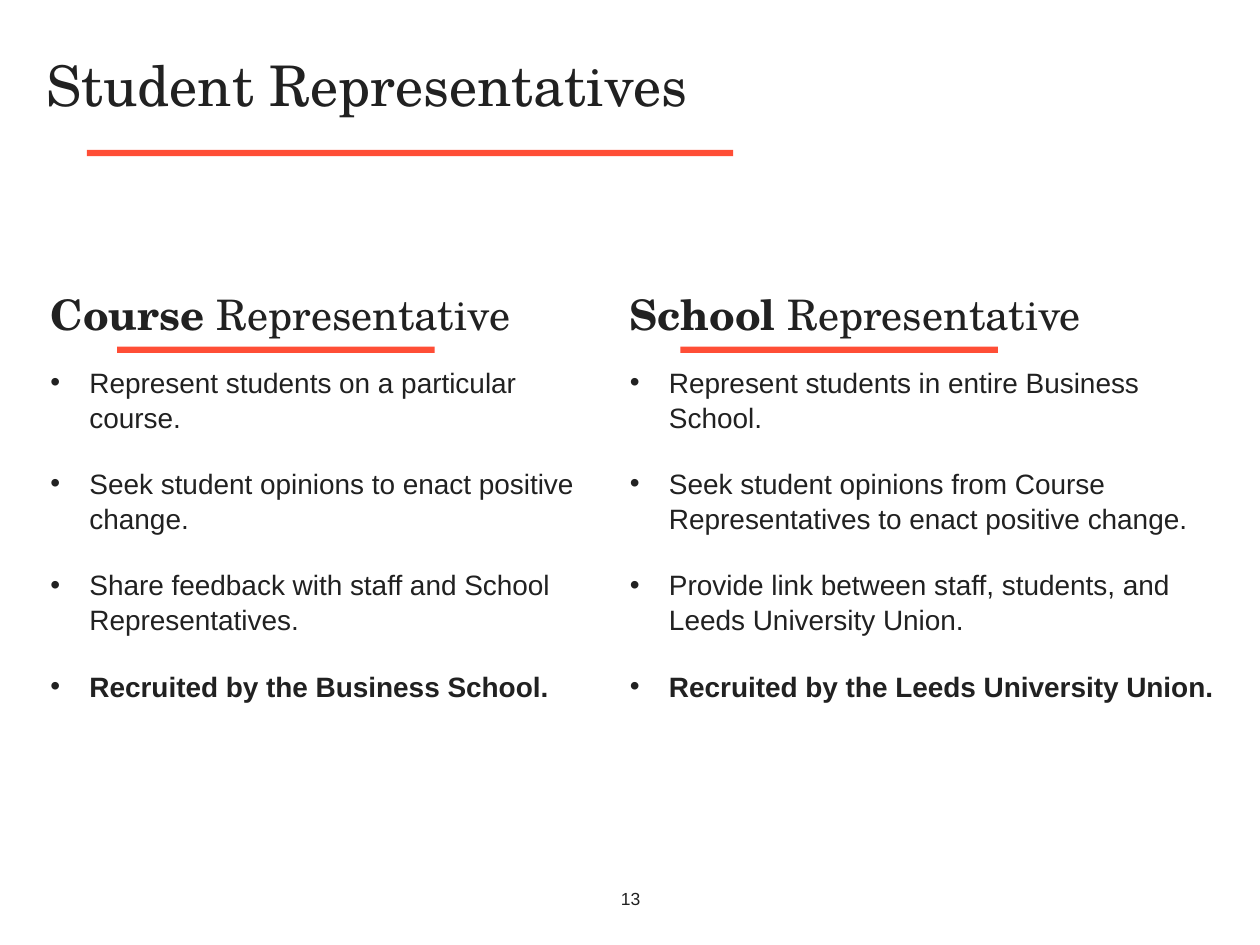
from dataclasses import dataclass

from lxml import etree
from pptx import Presentation
from pptx.dml.color import RGBColor
from pptx.enum.shapes import MSO_SHAPE
from pptx.enum.text import MSO_ANCHOR, PP_ALIGN
from pptx.oxml.ns import qn
from pptx.util import Inches, Pt

RECTANGLE = MSO_SHAPE.RECTANGLE
MIDDLE = MSO_ANCHOR.MIDDLE
CENTER = PP_ALIGN.CENTER


@dataclass(frozen=True)
class Theme:
    ink: RGBColor = RGBColor(0x21, 0x21, 0x21)
    accent: RGBColor = RGBColor(0xFF, 0x4E, 0x36)
    heading_font: str = "TeX Gyre Schola"
    body_font: str = "Arial"
    title_size: Pt = Pt(32)
    heading_size: Pt = Pt(24)
    body_size: Pt = Pt(16)
    number_size: Pt = Pt(10)


THEME = Theme()

# left, width, rule left, bold heading word, bullets (the last one is bold)
COLUMNS = [
    (0.4, 4.28, 0.93, "Course", [
        "Represent students on a particular course.",
        "Seek student opinions to enact positive change.",
        "Share feedback with staff and School Representatives.",
        "Recruited by the Business School.",
    ]),
    (5, 4.66, 5.4, "School", [
        "Represent students in entire Business School.",
        "Seek student opinions from Course Representatives to enact positive change.",
        "Provide link between staff, students, and Leeds University Union.",
        "Recruited by the Leeds University Union.",
    ]),
]
RULES = [(0.69, 1.19, 5.13)] + [(column[2], 2.75, 2.52) for column in COLUMNS]


def add_text_frame(left, top, width, height):
    """Add a wrapping text box without margins and return its text frame."""
    box = slide.shapes.add_textbox(Inches(left), Inches(top), Inches(width), Inches(height))
    frame = box.text_frame
    frame.word_wrap = True
    frame.margin_left = frame.margin_top = frame.margin_right = frame.margin_bottom = 0
    return frame


def style(paragraph, font_name, size):
    paragraph.font.name = font_name
    paragraph.font.size = size
    paragraph.font.color.rgb = THEME.ink


presentation = Presentation()
presentation.slide_width = Inches(10)
presentation.slide_height = Inches(7.5)
slide = presentation.slides.add_slide(presentation.slide_layouts[6])

# Title and slide number
title_frame = add_text_frame(0.37, 0.17, 9.28, 1.07)
title_frame.vertical_anchor = MIDDLE
title = title_frame.paragraphs[0]
title.text = "Student Representatives"
title.line_spacing = 0.9
style(title, THEME.heading_font, THEME.title_size)

number_frame = add_text_frame(4.65, 7, 0.71, 0.26)
number_frame.vertical_anchor = MIDDLE
number = number_frame.paragraphs[0]
number.text = "13"
number.alignment = CENTER
style(number, THEME.body_font, THEME.number_size)

# Two columns of heading and bullets
for left, width, _, role, bullets in COLUMNS:
    frame = add_text_frame(left, 2.29, width, 3.23)
    heading = frame.paragraphs[0]
    heading.space_after = Pt(2.2)
    style(heading, THEME.heading_font, THEME.heading_size)
    role_run = heading.add_run()
    role_run.text = role
    role_run.font.bold = True
    heading.add_run().text = " Representative"

    for text in bullets:
        paragraph = frame.add_paragraph()
        paragraph.text = text
        paragraph.line_spacing = 1.04
        paragraph.space_before = Pt(12)
        paragraph.space_after = Pt(6)
        properties = paragraph._p.get_or_add_pPr()
        properties.set("marL", str(Inches(0.31)))
        properties.set("indent", str(-Inches(0.31)))
        etree.SubElement(properties, qn("a:buFont")).set("typeface", THEME.body_font)
        etree.SubElement(properties, qn("a:buChar")).set("char", "•")
        style(paragraph, THEME.body_font, THEME.body_size)
        paragraph.font.bold = text == bullets[-1]

# Accent rules under the title and the column headings
for left, top, width in RULES:
    rule = slide.shapes.add_shape(
        RECTANGLE, Inches(left), Inches(top), Inches(width), Inches(0.05))
    rule.shadow.inherit = False
    rule.fill.solid()
    rule.fill.fore_color.rgb = THEME.accent
    rule.line.fill.background()

presentation.save("out.pptx")
